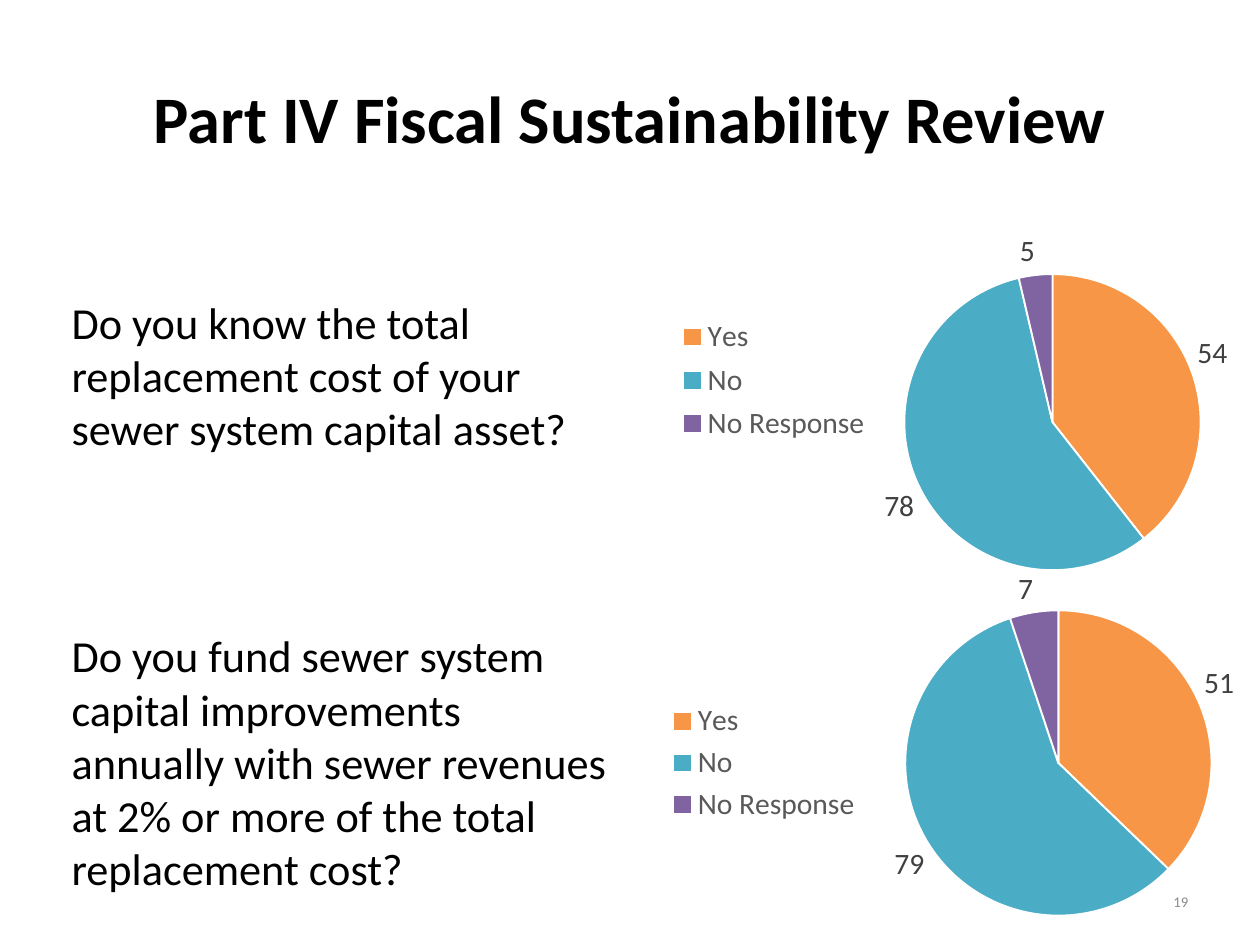
from dataclasses import dataclass

from lxml import etree
from pptx import Presentation
from pptx import util as u
from pptx.chart.data import CategoryChartData
from pptx.dml.color import RGBColor
from pptx.enum import chart as ch
from pptx.enum import text
from pptx.oxml import parse_xml
from pptx.oxml.ns import nsdecls, qn


@dataclass(frozen=True)
class Theme:
    font: str = "Calibri"
    ink: str = "000000"
    legend: str = "595959"
    label: str = "404040"
    muted: str = "8C8C8C"
    white: str = "FFFFFF"
    slices: tuple = ("F79646", "4BACC6", "8064A2")
    title_size: int = 54
    body_size: int = 36
    chart_size: int = 24
    number_size: int = 12


class SurveySlide:
    def __init__(self, deck, theme):
        self.theme = theme
        self.page = deck.slides.add_slide(deck.slide_layouts[6])

    def style(self, font, size, color, bold=False):
        font.name = self.theme.font
        font.size = u.Pt(size)
        font.bold = bold
        font.color.rgb = RGBColor.from_string(color)

    def text(self, words, place, size, color, align=text.PP_ALIGN.LEFT,
             anchor=text.MSO_ANCHOR.MIDDLE, bold=False):
        box = self.page.shapes.add_textbox(*map(u.Inches, place))
        frame = box.text_frame
        frame.word_wrap = True
        frame.vertical_anchor = anchor
        frame.text = words
        para = frame.paragraphs[0]
        para.alignment = align
        self.style(para.runs[0].font, size, color, bold)

    def layout(self, parent, index, place, inner=False):
        """Set a manual layout, given as fractions of the chart."""
        for old in parent.findall(qn("c:layout")):
            parent.remove(old)
        layout = parse_xml(f"<c:layout {nsdecls('c')}><c:manualLayout/></c:layout>")
        settings = [("layoutTarget", "inner")] if inner else []
        settings += [("xMode", "edge"), ("yMode", "edge")]
        settings += zip("xywh", place)
        for name, value in settings:
            etree.SubElement(layout[0], qn(f"c:{name}")).set("val", str(value))
        parent.insert(index, layout)

    def pie(self, answers, place, plot, legend_place=None):
        theme = self.theme
        data = CategoryChartData()
        data.categories = ["Yes", "No", "No Response"]
        data.add_series("Series 1", answers)
        chart = self.page.shapes.add_chart(
            ch.XL_CHART_TYPE.PIE, *map(u.Inches, place), data).chart
        chart.has_title = False
        self.style(chart.font, 10, theme.ink)

        # Transparent chart background
        space = chart.element
        space.find(qn("c:chart")).addnext(parse_xml(
            f"<c:spPr {nsdecls('c', 'a')}><a:noFill/><a:ln><a:noFill/></a:ln></c:spPr>"))
        self.layout(space.find(".//" + qn("c:plotArea")), 0, plot, inner=True)

        # Legend
        chart.has_legend = True
        legend = chart.legend
        legend.position = ch.XL_LEGEND_POSITION.LEFT
        legend.include_in_layout = False
        self.style(legend.font, theme.chart_size, theme.legend)
        if legend_place:
            self.layout(space.find(".//" + qn("c:legend")), 1, legend_place)

        # Slices and their values
        pie = chart.plots[0]
        pie.vary_by_categories = True
        for index, color in enumerate(theme.slices):
            piece = pie.series[0].points[index].format
            piece.fill.solid()
            piece.fill.fore_color.rgb = RGBColor.from_string(color)
            piece.line.color.rgb = RGBColor.from_string(theme.white)
            piece.line.width = u.Pt(1.5)
        labels = pie.series[0].data_labels
        labels.show_value = True
        labels.position = ch.XL_LABEL_POSITION.OUTSIDE_END
        self.style(labels.font, theme.chart_size, theme.label)


def main():
    deck = Presentation()
    deck.slide_width, deck.slide_height = u.Inches(14.22), u.Inches(10.67)
    theme = Theme()
    slide = SurveySlide(deck, theme)

    # Title and slide number
    slide.text("Part IV Fiscal Sustainability Review", (0.71, 0.43, 12.8, 1.78),
               theme.title_size, theme.ink, text.PP_ALIGN.CENTER, bold=True)
    slide.text("19", (10.19, 9.89, 3.32, 0.57), theme.number_size, theme.muted,
               text.PP_ALIGN.RIGHT)

    # Questions with their answers
    questions = [
        ("Do you know the total replacement cost of your sewer system capital asset?",
         (0.71, 3.28, 6.4, 1.92), (54, 78, 5), (7.41, 2.2, 6.62, 4.71),
         (0.42, 0.19, 0.51, 0.71), (0.02, 0.28, 0.36, 0.33)),
        ("Do you fund sewer system capital improvements annually with sewer "
         "revenues at 2% or more of the total replacement cost?",
         (0.71, 7.05, 6.4, 3.13), (51, 79, 7), (7.41, 6.45, 6.82, 4.32),
         (0.41, 0.1, 0.51, 0.8), None),
    ]
    for question, place, answers, chart_place, plot, legend_place in questions:
        slide.text(question, place, theme.body_size, theme.ink,
                   anchor=text.MSO_ANCHOR.TOP)
        slide.pie(answers, chart_place, plot, legend_place)

    deck.save("out.pptx")


if __name__ == "__main__":
    main()
